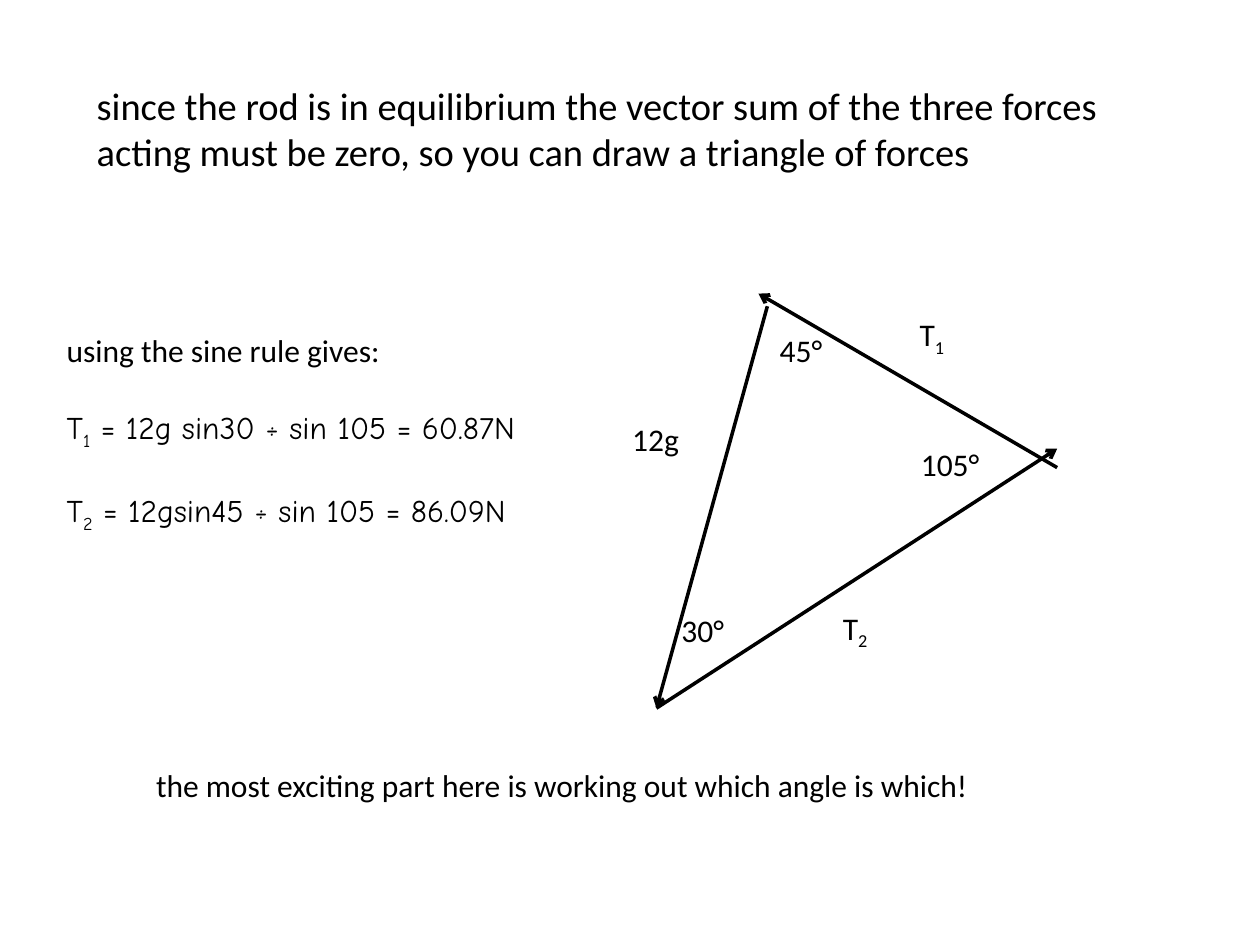
from pptx import Presentation
from pptx.dml.color import RGBColor
from pptx.enum import shapes, text
from pptx.oxml.ns import qn
from pptx.util import Pt
from lxml import etree

BLACK = RGBColor(0, 0, 0)
WHITE = RGBColor(255, 255, 255)


def write_text(paragraph, content, size=18, font="Calibri", color=BLACK, before=0):
    """Write content; a part between two underscores becomes a subscript."""
    paragraph.space_before = Pt(before)
    for index, part in enumerate(content.split("_")):
        if not part:
            continue
        run = paragraph.add_run()
        run.text = part
        run.font.size = Pt(size)
        run.font.name = font
        run.font.color.rgb = color
        if index % 2:
            run.font._element.set("baseline", "-25000")


def add_text_frame(slide, left, top, width, height):
    box = slide.shapes.add_textbox(Pt(left), Pt(top), Pt(width), Pt(height))
    frame = box.text_frame
    frame.word_wrap = True
    frame.auto_size = text.MSO_AUTO_SIZE.SHAPE_TO_FIT_TEXT
    return frame


def add_statement(slide, left, top, width, height, content, **text_format):
    frame = add_text_frame(slide, left, top, width, height)
    write_text(frame.paragraphs[0], content, **text_format)


def add_force(slide, start, end):
    """Draw one force as a line with an arrowhead at its end."""
    points = [Pt(value) for value in (*start, *end)]
    connector = slide.shapes.add_connector(shapes.MSO_CONNECTOR.STRAIGHT, *points)
    connector.line.color.rgb = BLACK
    connector.line.width = Pt(2)
    line = connector.line._get_or_add_ln()
    etree.SubElement(line, qn("a:tailEnd"), type="arrow")
    etree.SubElement(connector._element.spPr, qn("a:effectLst"))


def add_force_triangle(slide, left, top):
    # Forces, relative to the left and top of the triangle
    forces = [
        ((0, 236.9), (229, 88.6)),
        ((229, 99.4), (58.3, 0)),
        ((63.4, 7.2), (0, 236.9)),
    ]
    for start, end in forces:
        add_force(slide, *[(left + x, top + y) for x, y in (start, end)])

    # Names of the forces and sizes of the angles
    labels = [
        ("T_2_", 99.4, 176.4, 34.6),
        ("T_1_", 143.3, 8.6, 34.6),
        ("12g", -20.9, 68.4, 50.4),
        ("30°", 7.2, 177.8, 45.4),
        ("45°", 63.4, 18, 45.4),
        ("105°", 144, 82.8, 56.9),
    ]
    for content, x, y, width in labels:
        add_statement(slide, left + x, top + y, width, 28.8, content)


def add_sine_rule(slide, left, top, width, height):
    frame = add_text_frame(slide, left, top, width, height)
    write_text(frame.paragraphs[0], "using the sine rule gives:")
    results = [
        ("T_1_ = 12g sin30 ÷ sin 105 = 60.87N", 22),
        ("T_2_ = 12gsin45 ÷ sin 105 = 86.09N", 23),
    ]
    for content, before in results:
        write_text(frame.add_paragraph(), content, font="Comic Neue", before=before)


def main():
    presentation = Presentation()
    presentation.slide_width = Pt(720)
    presentation.slide_height = Pt(540)
    slide = presentation.slides.add_slide(presentation.slide_layouts[6])
    slide.background.fill.solid()
    slide.background.fill.fore_color.rgb = WHITE

    # Opening statement
    add_statement(
        slide, 48.2, 43.2, 617.8, 60.5,
        "since the rod is in equilibrium the vector sum of the three forces "
        "acting must be zero, so you can draw a triangle of forces",
        size=22,
    )
    # Triangle of forces
    add_force_triangle(slide, 375.1, 167.8)
    # Working
    add_sine_rule(slide, 31, 185.8, 311.8, 138.2)
    # Closing remark
    add_statement(
        slide, 82.1, 434.2, 561.6, 28.8,
        "the most exciting part here is working out which angle is which!",
    )
    presentation.save("out.pptx")


if __name__ == "__main__":
    main()
